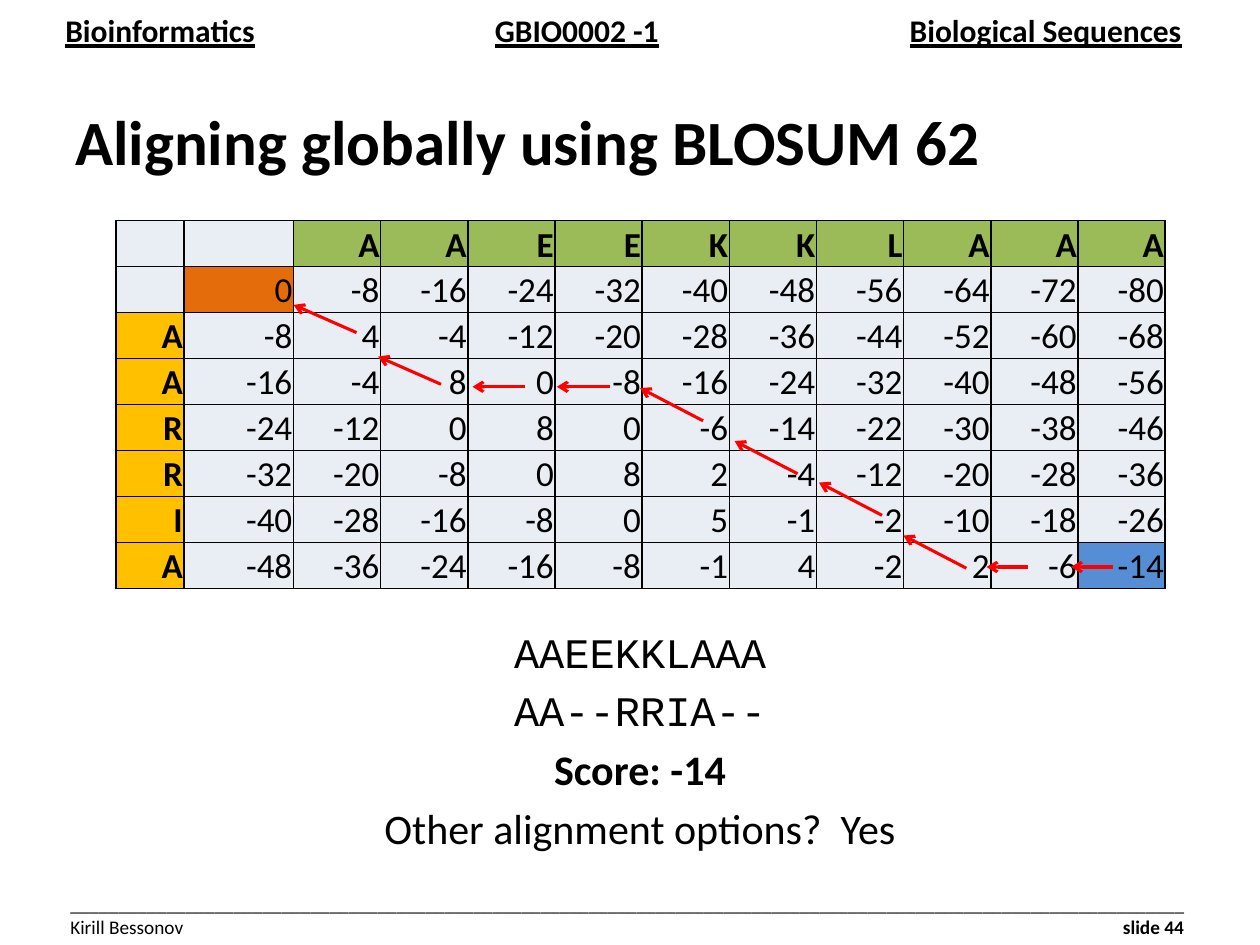
from lxml.etree import SubElement
from pptx import Presentation
from pptx.dml.color import RGBColor
from pptx.enum.shapes import MSO_CONNECTOR
from pptx.enum.text import MSO_ANCHOR, PP_ALIGN
from pptx.oxml.ns import qn
from pptx.util import Inches, Pt

BLACK = RGBColor(0x00, 0x00, 0x00)
RED = RGBColor(0xFF, 0x00, 0x00)
PALE = RGBColor(0xE9, 0xED, 0xF4)
GREEN = RGBColor(0x9B, 0xBB, 0x59)
YELLOW = RGBColor(0xFF, 0xC0, 0x00)
ORANGE = RGBColor(0xE4, 0x6C, 0x0A)
BLUE = RGBColor(0x55, 0x8E, 0xD5)

ACROSS = "AAEEKKLAAA"
DOWN = "AARRIA"
SCORES = [
    [0, -8, -16, -24, -32, -40, -48, -56, -64, -72, -80],
    [-8, 4, -4, -12, -20, -28, -36, -44, -52, -60, -68],
    [-16, -4, 8, 0, -8, -16, -24, -32, -40, -48, -56],
    [-24, -12, 0, 8, 0, -6, -14, -22, -30, -38, -46],
    [-32, -20, -8, 0, 8, 2, -4, -12, -20, -28, -36],
    [-40, -28, -16, -8, 0, 5, -1, -2, -10, -18, -26],
    [-48, -36, -24, -16, -8, -1, 4, -2, 2, -6, -14],
]
GRID_LEFT, GRID_TOP, GRID_WIDTH, GRID_HEIGHT = 0.92, 1.75, 8.33, 2.92
LETTER_WIDTH, GAP_WIDTH = 0.54, 0.87

# Traceback from the last cell: run and rise of each arrow, then its tips
TRACEBACK = [
    ((0.33, 0), [(8.5, 4.5), (7.83, 4.5)]),
    ((0.5, 0.26), [(7.17, 4.25), (6.5, 3.83), (5.83, 3.5), (5.08, 3.08)]),
    ((0.42, 0), [(4.42, 3.07), (3.75, 3.07)]),
    ((0.5, 0.22), [(3, 2.83), (2.33, 2.42)]),
]


def format_runs(paragraph, size, font="Calibri", bold=False, underline=False):
    for run in paragraph.runs:
        run.font.name = font
        run.font.size = Pt(size)
        run.font.bold = bold
        run.font.underline = underline
        run.font.color.rgb = BLACK


def add_text_frame(slide, left, top, width, height):
    box = slide.shapes.add_textbox(Inches(left), Inches(top), Inches(width), Inches(height))
    box.text_frame.word_wrap = True
    return box.text_frame


def set_tab_stops(paragraph, stops):
    """Set (position in inches, alignment code) tab stops."""
    tab_list = SubElement(paragraph._p.get_or_add_pPr(), qn("a:tabLst"))
    for position, alignment in stops:
        SubElement(tab_list, qn("a:tab"), pos=str(Inches(position)), algn=alignment)


def add_header(slide):
    header = add_text_frame(slide, 0.42, 0.04, 9.42, 0.4).paragraphs[0]
    header.text = "Bioinformatics\tGBIO0002 -1\tBiological Sequences"
    set_tab_stops(header, [(4.06, "ctr"), (8.86, "r")])
    format_runs(header, 18, bold=True, underline=True)


def add_footer(slide):
    frame = add_text_frame(slide, 0.46, 7.03, 9.13, 0.47)
    frame.text = "_" * 116 + "\nKirill Bessonov\t"
    rule, credit = frame.paragraphs
    credit.add_run().text = "slide 44"
    set_tab_stops(credit, [(8.84, "r")])
    for paragraph in (rule, credit):
        format_runs(paragraph, 11)
    credit.runs[-1].font.bold = True


def add_title(slide):
    frame = add_text_frame(slide, 0.5, 0.67, 9, 0.88)
    frame.vertical_anchor = MSO_ANCHOR.MIDDLE
    frame.text = "Aligning globally using BLOSUM 62"
    format_runs(frame.paragraphs[0], 36, bold=True)


def add_alignment(slide):
    lines = [
        (ACROSS, "Courier New", False),
        ("AA--RRIA--", "Courier New", False),
        ("Score: -14", "Calibri", True),
        ("Other alignment options?  Yes", "Calibri", False),
    ]
    frame = add_text_frame(slide, 0.58, 4.92, 9, 1.92)
    frame.text = "\n".join(text for text, _, _ in lines)
    for paragraph, (_, font, bold) in zip(frame.paragraphs, lines):
        paragraph.alignment = PP_ALIGN.CENTER
        paragraph.space_before = Pt(4.8)
        format_runs(paragraph, 24, font, bold)


def add_borders(cell):
    properties = cell._tc.get_or_add_tcPr()
    for index, side in enumerate(("a:lnL", "a:lnR", "a:lnT", "a:lnB")):
        border = SubElement(properties, qn(side), w=str(Pt(1)))
        fill = SubElement(border, qn("a:solidFill"))
        SubElement(fill, qn("a:srgbClr"), val=str(BLACK))
        properties.insert(index, border)


def cell_color(row, column):
    if (row, column) == (1, 1):
        return ORANGE
    if (row, column) == (len(SCORES), len(ACROSS) + 1):
        return BLUE
    if row == 0 and column > 1:
        return GREEN
    if column == 0 and row > 1:
        return YELLOW
    return PALE


def fill_cell(cell, text, color, bold):
    cell.margin_left = cell.margin_right = cell.margin_top = Inches(0.01)
    cell.margin_bottom = 0
    cell.vertical_anchor = MSO_ANCHOR.BOTTOM
    cell.fill.solid()
    cell.fill.fore_color.rgb = color
    add_borders(cell)
    paragraph = cell.text_frame.paragraphs[0]
    paragraph.alignment = PP_ALIGN.RIGHT
    if text:
        paragraph.text = text
        format_runs(paragraph, 20, bold=bold)


def add_score_matrix(slide):
    rows = [["", "", *ACROSS]]
    rows += [[letter, *map(str, scores)] for letter, scores in zip(["", *DOWN], SCORES)]
    table = slide.shapes.add_table(
        len(rows), len(rows[0]), Inches(GRID_LEFT), Inches(GRID_TOP),
        Inches(GRID_WIDTH), Inches(GRID_HEIGHT)).table
    table.first_row = table.horz_banding = False
    score_width = (GRID_WIDTH - LETTER_WIDTH - GAP_WIDTH) / len(ACROSS)
    widths = [LETTER_WIDTH, GAP_WIDTH] + [score_width] * len(ACROSS)
    for column, width in zip(table.columns, widths):
        column.width = Inches(width)
    for r, row in enumerate(rows):
        table.rows[r].height = Inches(GRID_HEIGHT / len(rows))
        for c, text in enumerate(row):
            fill_cell(table.cell(r, c), text, cell_color(r, c), bold=r == 0 or c == 0)


def add_arrow(slide, tip, run, rise):
    x, y = tip
    arrow = slide.shapes.add_connector(
        MSO_CONNECTOR.STRAIGHT, Inches(x + run), Inches(y + rise), Inches(x), Inches(y))
    arrow.line.color.rgb = RED
    arrow.line.width = Pt(1.75)
    SubElement(arrow.line._get_or_add_ln(), qn("a:tailEnd"), type="arrow")
    SubElement(arrow._element.spPr, qn("a:effectLst"))


def main():
    presentation = Presentation()
    presentation.slide_width, presentation.slide_height = Inches(10), Inches(7.5)
    slide = presentation.slides.add_slide(presentation.slide_layouts[6])
    add_header(slide)
    add_footer(slide)
    add_title(slide)
    add_alignment(slide)
    add_score_matrix(slide)
    for (run, rise), tips in TRACEBACK:
        for tip in tips:
            add_arrow(slide, tip, run, rise)
    presentation.save("out.pptx")


if __name__ == "__main__":
    main()
